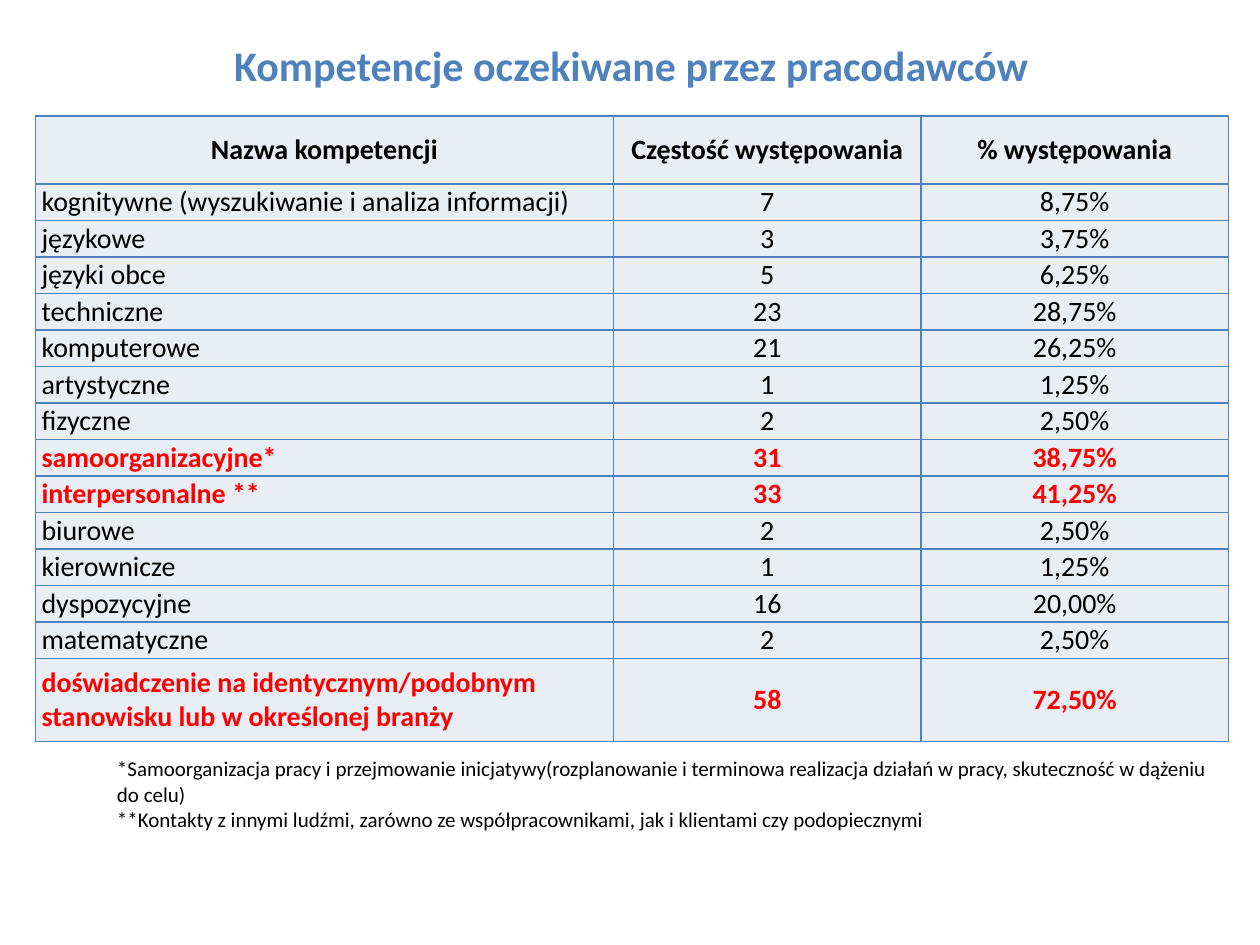
"""Build a slide with a table of the competences employers expect."""
from lxml import etree
from pptx import Presentation, util as u
from pptx.dml.color import RGBColor
from pptx.enum import text
from pptx.oxml import ns

TITLE = "Kompetencje oczekiwane przez pracodawców"
HEADER = ("Nazwa kompetencji", "Częstość występowania", "% występowania")
ROWS = [
    ("kognitywne (wyszukiwanie i analiza informacji)", "7", "8,75%"),
    ("językowe", "3", "3,75%"),
    ("języki obce", "5", "6,25%"),
    ("techniczne", "23", "28,75%"),
    ("komputerowe", "21", "26,25%"),
    ("artystyczne", "1", "1,25%"),
    ("fizyczne", "2", "2,50%"),
    ("samoorganizacyjne*", "31", "38,75%"),
    ("interpersonalne **", "33", "41,25%"),
    ("biurowe", "2", "2,50%"),
    ("kierownicze", "1", "1,25%"),
    ("dyspozycyjne", "16", "20,00%"),
    ("matematyczne", "2", "2,50%"),
    ("doświadczenie na identycznym/podobnym stanowisku lub w określonej branży", "58", "72,50%"),
]
KEY_COUNTS = {"31", "33", "58"}
NOTES = [
    "*Samoorganizacja pracy i przejmowanie inicjatywy(rozplanowanie i terminowa realizacja "
    "działań w pracy, skuteczność w dążeniu do celu)",
    "**Kontakty z innymi ludźmi, zarówno ze współpracownikami, jak i klientami czy podopiecznymi",
]

BLUE = RGBColor(0x4F, 0x81, 0xBD)
PALE = RGBColor(0xE9, 0xED, 0xF4)
BLACK = RGBColor(0, 0, 0)
RED = RGBColor(0xFF, 0, 0)
FONT = "Calibri"
COLUMNS = (4.59, 2.44, 2.44)
HEIGHTS = [0.54] + [0.29] * (len(ROWS) - 1) + [0.66]
LEFT, TOP = 0.28, 0.92


def style(para, size, color, bold=False, centred=False):
    para.alignment = text.PP_ALIGN.CENTER if centred else text.PP_ALIGN.LEFT
    for span in para.runs:
        span.font.name, span.font.size, span.font.bold = FONT, u.Pt(size), bold
        span.font.color.rgb = color


def add_text(page, area, lines, size, color, bold=False, centred=False):
    frame = page.shapes.add_textbox(*map(u.Inches, area)).text_frame
    frame.word_wrap = True
    frame.text = "\n".join(lines)
    for para in frame.paragraphs:
        style(para, size, color, bold, centred)
    return frame


def add_borders(cell):
    properties = cell._tc.get_or_add_tcPr()
    for index, side in enumerate(("lnL", "lnR", "lnT", "lnB")):
        line = etree.Element(ns.qn(f"a:{side}"), w=str(u.Pt(1)))
        fill = etree.SubElement(line, ns.qn("a:solidFill"))
        etree.SubElement(fill, ns.qn("a:srgbClr"), val=str(BLUE))
        properties.insert(index, line)


def fill_cell(cell, value, color, bold, centred):
    cell.text = value
    cell.vertical_anchor = text.MSO_ANCHOR.MIDDLE
    cell.margin_left = cell.margin_right = u.Inches(0.05)
    cell.margin_top = cell.margin_bottom = 0
    cell.fill.solid()
    cell.fill.fore_color.rgb = PALE
    style(cell.text_frame.paragraphs[0], 16, color, bold, centred)
    add_borders(cell)


def add_competences(page):
    area = map(u.Inches, (LEFT, TOP, sum(COLUMNS), sum(HEIGHTS)))
    table = page.shapes.add_table(len(HEIGHTS), len(COLUMNS), *area).table
    for column, width in zip(table.columns, COLUMNS):
        column.width = u.Inches(width)
    for row, height in zip(table.rows, HEIGHTS):
        row.height = u.Inches(height)
    for r, values in enumerate([HEADER] + ROWS):
        key = values[1] in KEY_COUNTS
        for c, value in enumerate(values):
            fill_cell(table.cell(r, c), value, RED if key else BLACK,
                      bold=key or r == 0, centred=r == 0 or c > 0)


def main():
    deck = Presentation()
    deck.slide_width, deck.slide_height = u.Inches(10), u.Inches(7.5)
    page = deck.slides.add_slide(deck.slide_layouts[6])
    title = add_text(page, (0.51, -0.11, 9, 1.25), [TITLE], 24, BLUE, bold=True, centred=True)
    title.vertical_anchor = text.MSO_ANCHOR.MIDDLE
    add_competences(page)
    notes = add_text(page, (0.83, 5.95, 8.98, 0.71), NOTES, 12, BLACK)
    notes.auto_size = text.MSO_AUTO_SIZE.SHAPE_TO_FIT_TEXT
    deck.save("out.pptx")


if __name__ == "__main__":
    main()
